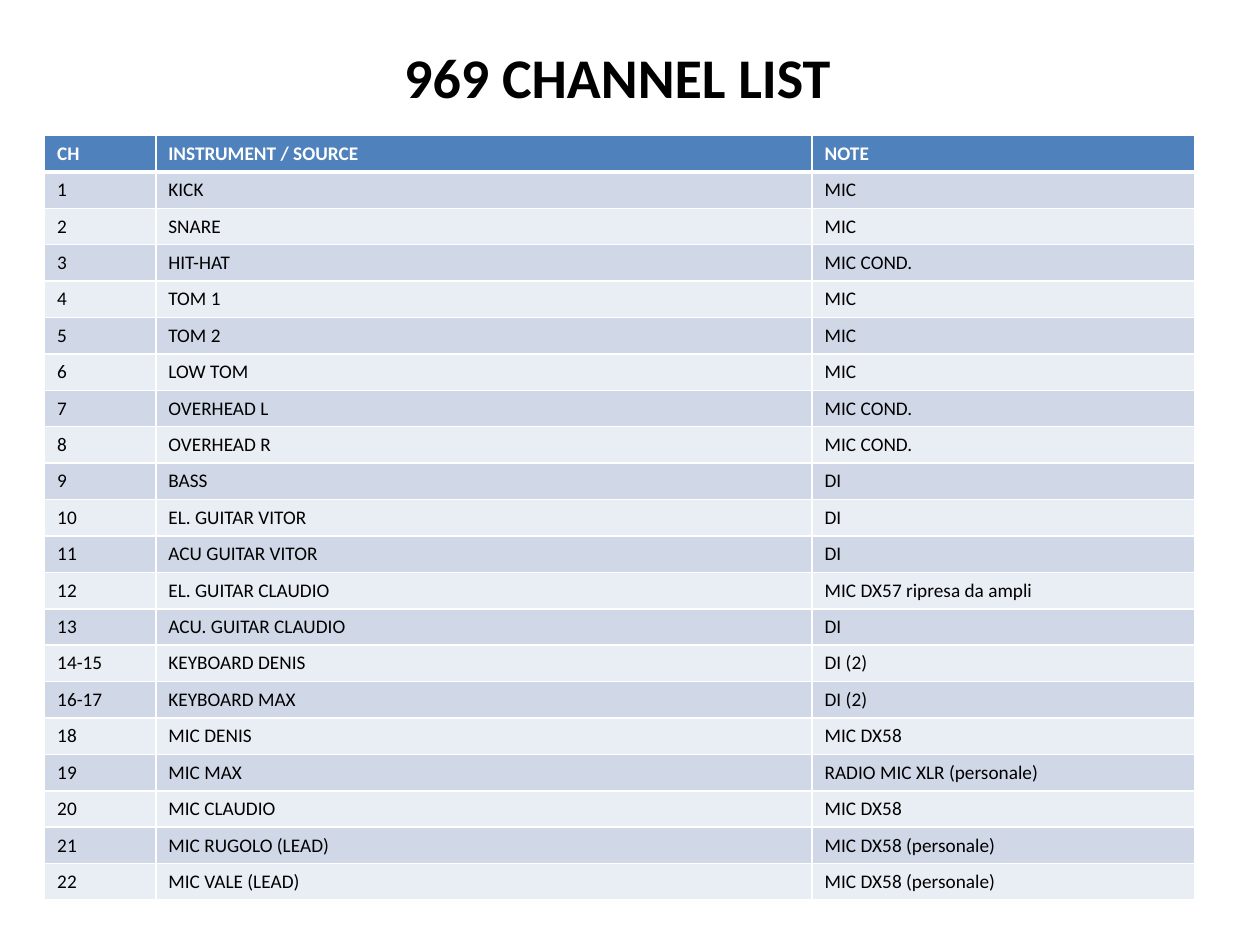
from lxml import etree
from pptx import Presentation, util as u
from pptx.dml.color import RGBColor
from pptx.enum import text
from pptx.oxml import ns

FONT = "Calibri"
WHITE, BLACK = "FFFFFF", "000000"
HEADER_FILL = "4F81BD"
BAND_FILLS = ("D0D8E8", "E9EDF4")

HEADINGS = ("CH", "INSTRUMENT / SOURCE", "NOTE")
CHANNELS = [
    ("1", "KICK", "MIC"),
    ("2", "SNARE", "MIC"),
    ("3", "HIT-HAT", "MIC COND."),
    ("4", "TOM 1", "MIC"),
    ("5", "TOM 2", "MIC"),
    ("6", "LOW TOM", "MIC"),
    ("7", "OVERHEAD L", "MIC COND."),
    ("8", "OVERHEAD R", "MIC COND."),
    ("9", "BASS", "DI"),
    ("10", "EL. GUITAR VITOR", "DI"),
    ("11", "ACU GUITAR VITOR", "DI"),
    ("12", "EL. GUITAR CLAUDIO", "MIC DX57 ripresa da ampli"),
    ("13", "ACU. GUITAR CLAUDIO", "DI"),
    ("14-15", "KEYBOARD DENIS", "DI (2)"),
    ("16-17", "KEYBOARD MAX", "DI (2)"),
    ("18", "MIC DENIS", "MIC DX58"),
    ("19", "MIC MAX", "RADIO MIC XLR (personale)"),
    ("20", "MIC CLAUDIO", "MIC DX58"),
    ("21", "MIC RUGOLO (LEAD)", "MIC DX58 (personale)"),
    ("22", "MIC VALE (LEAD)", "MIC DX58 (personale)"),
]


def color(value):
    return RGBColor.from_string(value)


def write(frame, words, size=11, ink=BLACK, bold=False):
    """Put one formatted run into a text frame."""
    span = frame.paragraphs[0].add_run()
    span.text = words
    span.font.name = FONT
    span.font.size = u.Pt(size)
    span.font.bold = bold
    span.font.color.rgb = color(ink)


def add_borders(cell, top=1, bottom=1):
    """Draw white borders; widths are in points."""
    properties = cell._tc.get_or_add_tcPr()
    widths = {"lnL": 1, "lnR": 1, "lnT": top, "lnB": bottom}
    for index, (side, width) in enumerate(widths.items()):
        line = etree.Element(ns.qn(f"a:{side}"), w=str(u.Pt(width)))
        fill = etree.SubElement(line, ns.qn("a:solidFill"))
        etree.SubElement(fill, ns.qn("a:srgbClr"), val=WHITE)
        properties.insert(index, line)


class ChannelSheet:
    def __init__(self, deck):
        self.page = deck.slides.add_slide(deck.slide_layouts[6])

    def title(self, words, left, top, width, height):
        box = self.page.shapes.add_textbox(
            u.Cm(left), u.Cm(top), u.Cm(width), u.Cm(height))
        box.text_frame.word_wrap = False
        box.text_frame.auto_size = text.MSO_AUTO_SIZE.SHAPE_TO_FIT_TEXT
        write(box.text_frame, words, size=32, bold=True)

    def table(self, rows, left, top, widths, row_height):
        """Build a banded table whose first row is the header."""
        table = self.page.shapes.add_table(
            len(rows), len(widths), u.Cm(left), u.Cm(top),
            u.Cm(sum(widths)), u.Cm(row_height * len(rows))).table
        for column, width in zip(table.columns, widths):
            column.width = u.Cm(width)
        for number, row in enumerate(rows):
            table.rows[number].height = u.Cm(row_height)
            header = number == 0
            for column, words in enumerate(row):
                cell = table.cell(number, column)
                cell.fill.solid()
                cell.fill.fore_color.rgb = color(
                    HEADER_FILL if header else BAND_FILLS[(number - 1) % 2])
                add_borders(cell, top=3 if number == 1 else 1,
                            bottom=3 if header else 1)
                write(cell.text_frame, words, bold=header,
                      ink=WHITE if header else BLACK)


def main():
    deck = Presentation()
    deck.slide_width, deck.slide_height = u.Cm(25.4), u.Cm(19.05)
    sheet = ChannelSheet(deck)
    sheet.table([HEADINGS, *CHANNELS], left=0.9, top=2.73,
                widths=(2.24, 13.23, 7.72), row_height=0.72)
    sheet.title("969 CHANNEL LIST", left=7.9, top=0.74, width=9.2, height=1.62)
    deck.save("out.pptx")


if __name__ == "__main__":
    main()
